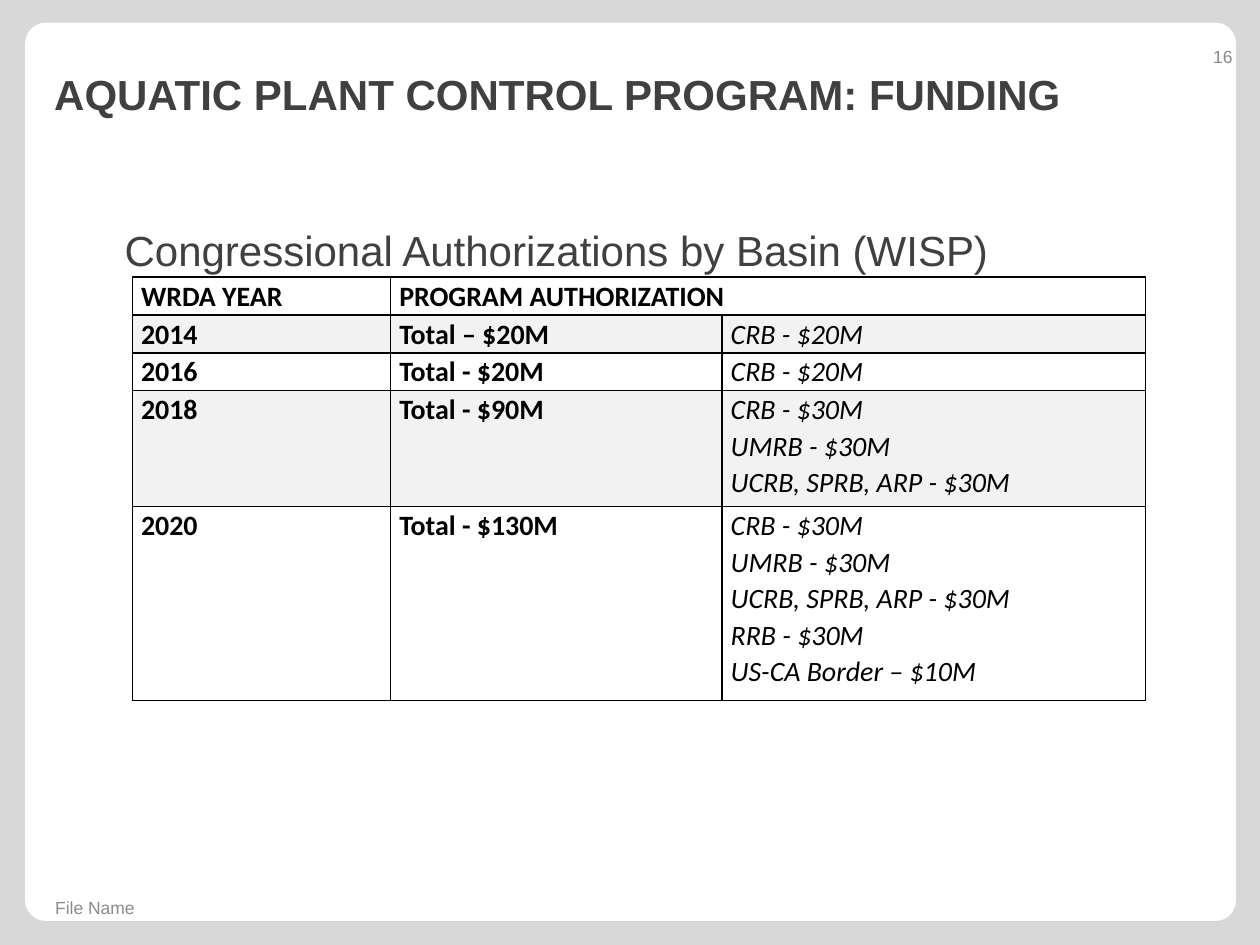
from dataclasses import dataclass

from lxml.etree import SubElement
from pptx import Presentation
from pptx.dml.color import RGBColor as RGB
from pptx.enum.shapes import MSO_SHAPE as SHAPE
from pptx.enum.text import MSO_ANCHOR as ANCHOR, PP_ALIGN as ALIGN
from pptx.oxml.ns import qn
from pptx.util import Inches, Pt


@dataclass(frozen=True)
class Theme:
    background: RGB = RGB.from_string("D8D8D8")
    panel: RGB = RGB.from_string("FFFFFF")
    band: RGB = RGB.from_string("F2F2F2")
    heading: RGB = RGB.from_string("404040")
    footer: RGB = RGB.from_string("8C8C8C")
    number: RGB = RGB.from_string("898989")
    ink: RGB = RGB.from_string("000000")
    heading_size: Pt = Pt(24)
    cell_size: Pt = Pt(16)
    small_size: Pt = Pt(10)
    border: Pt = Pt(1)
    text_font: str = "Arial"
    table_font: str = "Calibri"


THEME = Theme()
COLUMNS = [2.05, 2.63, 3.36]
ROW_HEIGHTS = [0.3, 0.3, 0.3, 0.92, 1.54]
HEADER = ["WRDA YEAR", "PROGRAM AUTHORIZATION"]
AUTHORIZATIONS = [
    ("2014", "Total – $20M", ["CRB - $20M"]),
    ("2016", "Total - $20M", ["CRB - $20M"]),
    ("2018", "Total - $90M",
     ["CRB - $30M", "UMRB - $30M", "UCRB, SPRB, ARP - $30M"]),
    ("2020", "Total - $130M",
     ["CRB - $30M", "UMRB - $30M", "UCRB, SPRB, ARP - $30M",
      "RRB - $30M", "US-CA Border – $10M"]),
]


def set_attrs(target, values):
    for name, value in values.items():
        setattr(target, name, value)


def format_font(font, color, **values):
    set_attrs(font, values)
    font.color.rgb = color


def place(sp, left, top, width, height):
    box = dict(left=left, top=top, width=width, height=height)
    set_attrs(sp, {name: Inches(value) for name, value in box.items()})


def write_line(sp, text, color, size, align=ALIGN.LEFT, bold=False):
    tf = sp.text_frame
    set_attrs(tf, dict(text=text, word_wrap=True, vertical_anchor=ANCHOR.MIDDLE))
    p = tf.paragraphs[0]
    p.alignment = align
    format_font(p.runs[0].font, color, name=THEME.text_font, size=size, bold=bold)


def add_panel(slide):
    sp = slide.shapes.add_shape(SHAPE.ROUNDED_RECTANGLE, 0, 0, 0, 0)
    place(sp, 0.2, 0.18, 9.61, 7.13)
    sp.adjustments[0] = 0.023
    sp.shadow.inherit = False
    sp.fill.solid()
    sp.fill.fore_color.rgb = THEME.panel
    sp.line.fill.background()
    slide.shapes._spTree.insert(2, sp._element)


def add_title(slide, text):
    sp = slide.shapes.title
    place(sp, 0.33, 0.3, 9.17, 0.88)
    write_line(sp, text, THEME.heading, THEME.heading_size, bold=True)


def add_label(slide, box, *args, **kwargs):
    sp = slide.shapes.add_textbox(0, 0, 0, 0)
    place(sp, *box)
    write_line(sp, *args, **kwargs)


def add_borders(cell):
    tc_pr = cell._tc.get_or_add_tcPr()
    for position, side in enumerate(("lnL", "lnR", "lnT", "lnB")):
        ln = SubElement(tc_pr, qn(f"a:{side}"), w=str(THEME.border))
        fill = SubElement(ln, qn("a:solidFill"))
        SubElement(fill, qn("a:srgbClr"), val=str(THEME.ink))
        tc_pr.insert(position, ln)


def style_cell(cell, banded):
    set_attrs(cell, dict(margin_left=Inches(0.07), margin_right=Inches(0.07),
                         margin_top=0, margin_bottom=0))
    if banded:
        cell.fill.solid()
        cell.fill.fore_color.rgb = THEME.band
    else:
        cell.fill.background()
    add_borders(cell)


def write_cell(cell, lines, italic=False):
    cell.text = "\n".join(lines)
    for p in cell.text_frame.paragraphs:
        p.line_spacing = 1.07
        format_font(p.runs[0].font, THEME.ink, name=THEME.table_font,
                    size=THEME.cell_size, bold=not italic, italic=italic)


def add_authorization_table(slide):
    frame = slide.shapes.add_table(
        len(ROW_HEIGHTS), len(COLUMNS), Inches(1.05), Inches(2.2),
        Inches(sum(COLUMNS)), Inches(sum(ROW_HEIGHTS)))
    table = frame.table
    set_attrs(table, dict(first_row=False, horz_banding=False))
    for column, width in zip(table.columns, COLUMNS):
        column.width = Inches(width)
    for index, (row, height) in enumerate(zip(table.rows, ROW_HEIGHTS)):
        row.height = Inches(height)
        for cell in row.cells:
            style_cell(cell, banded=index % 2 == 1)
    table.cell(0, 1).merge(table.cell(0, 2))
    for col, text in enumerate(HEADER):
        write_cell(table.cell(0, col), [text])
    for row, (year, total, basins) in enumerate(AUTHORIZATIONS, start=1):
        write_cell(table.cell(row, 0), [year])
        write_cell(table.cell(row, 1), [total])
        write_cell(table.cell(row, 2), basins, italic=True)


def main():
    prs = Presentation()
    set_attrs(prs, dict(slide_width=Inches(10), slide_height=Inches(7.5)))
    slide = prs.slides.add_slide(prs.slide_layouts[5])
    slide.background.fill.solid()
    slide.background.fill.fore_color.rgb = THEME.background
    add_panel(slide)
    add_title(slide, "AQUATIC PLANT CONTROL PROGRAM: FUNDING")
    add_label(slide, (0.89, 1.74, 8.61, 0.48),
              "Congressional Authorizations by Basin (WISP)",
              THEME.heading, THEME.heading_size)
    add_label(slide, (0.34, 7.08, 3.17, 0.24), "File Name",
              THEME.footer, THEME.small_size)
    add_label(slide, (9.08, 0.25, 0.8, 0.4), "16",
              THEME.number, THEME.small_size, align=ALIGN.RIGHT)
    add_authorization_table(slide)
    prs.save("out.pptx")


if __name__ == "__main__":
    main()
